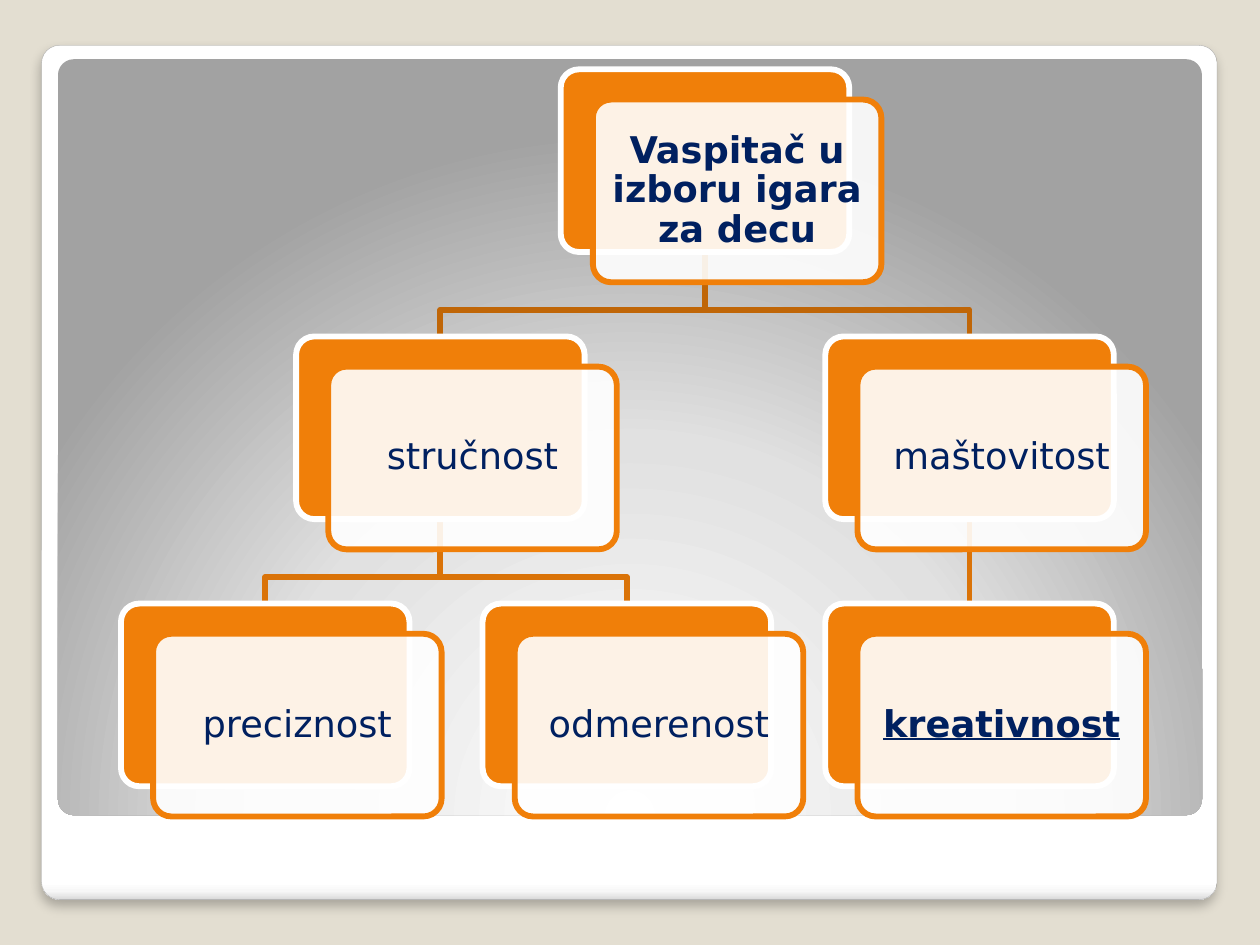
from lxml import etree
from pptx import Presentation
from pptx import util as u
from pptx.dml.color import RGBColor
from pptx.enum import shapes as es, text as et
from pptx.oxml import ns

SAND = RGBColor(0xE3, 0xDE, 0xD1)
WHITE = RGBColor(0xFF, 0xFF, 0xFF)
GRAY = RGBColor(0xA4, 0xA4, 0xA4)
ORANGE = RGBColor(0xF0, 0x7F, 0x09)
DARK = RGBColor(0xC0, 0x66, 0x07)
RUST = RGBColor(0xDA, 0x73, 0x08)
NAVY = RGBColor(0x00, 0x20, 0x60)

WIDE, HIGH = 2.29, 1.45
SHIFT_X, SHIFT_Y = 0.255, 0.24
BEND = 0.46
STROKE = 3.35
ROWS = [0.55, 2.67, 4.79]
NODES = {
    "Vaspitač u izboru igara za decu": (4.45, 0, {"bold": True}),
    "stručnost": (2.35, 1, {}),
    "preciznost": (0.96, 2, {}),
    "odmerenost": (3.83, 2, {}),
    "maštovitost": (6.55, 1, {}),
    "kreativnost": (6.55, 2, {"bold": True, "underline": True}),
}
ROOT = "Vaspitač u izboru igara za decu"
LINKS = [
    ("maštovitost", "kreativnost", RUST),
    (ROOT, "maštovitost", DARK),
    ("stručnost", "odmerenost", RUST),
    ("stručnost", "preciznost", RUST),
    (ROOT, "stručnost", DARK),
]


def put(obj, vals):
    for name, val in vals.items():
        setattr(obj, name, val)


def add(node, tag, **vals):
    return etree.SubElement(node, ns.qn("a:" + tag), {k: str(v) for k, v in vals.items()})


def stroke(shape, color, width=STROKE):
    shape.line.color.rgb = color
    shape.line.width = u.Pt(width)


def panel(slide, box, round_by):
    shape = slide.shapes.add_shape(
        es.MSO_SHAPE.ROUNDED_RECTANGLE, *[u.Inches(v) for v in box])
    shape.adjustments[0] = round_by
    shape.shadow.inherit = False
    return shape


def blend(shape, stops):
    shape.fill.gradient()
    grad = shape.element.spPr.find(ns.qn("a:gradFill"))
    for kid in list(grad):
        grad.remove(kid)
    grad.set("rotWithShape", "1")
    group = add(grad, "gsLst")
    for pos, color in stops:
        add(add(group, "gs", pos=pos * 1000), "srgbClr", val=color)
    return grad


def frame(slide, box):
    left, top, width, height = box
    outer = panel(slide, box, 0.021)
    grad = blend(outer, [(0, "FFFFFF"), (98, "FFFFFF"), (99, "F7F7F7"), (100, "DADADA")])
    add(grad, "lin", ang=90 * 60000, scaled=0)
    stroke(outer, GRAY, 0.16)
    effect = outer.element.spPr.find(ns.qn("a:effectLst"))
    shade = add(effect, "outerShdw", blurRad=u.Pt(6), dist=u.Pt(4),
                dir=90 * 60000, algn="t", rotWithShape=0)
    add(add(shade, "srgbClr", val="000000"), "alpha", val=25000)

    inner = panel(slide, (left + 0.13, top + 0.11, width - 0.25, height - 0.78), 0.021)
    grad = blend(inner, [(0, "FFFFFF"), (55, "E1E1E1"), (100, "A2A2A2")])
    add(add(grad, "path", path="circle"), "fillToRect", l=50000, t=175000, r=50000, b=-75000)
    inner.line.fill.background()


def link(slide, start, end, color):
    (x1, y1), (x2, y2) = start, end
    if x1 == x2:
        line = slide.shapes.add_connector(
            es.MSO_CONNECTOR.STRAIGHT, *[u.Inches(v) for v in (x1, y1, x2, y2)])
        add(line.element.spPr, "effectLst")
        stroke(line, color)
        return
    spots = [(u.Inches(x), u.Inches(y)) for x, y in
             (start, (x1, y1 + BEND), (x2, y1 + BEND), end)]
    path = slide.shapes.build_freeform(*spots[0])
    path.add_line_segments(spots[1:], close=False)
    line = path.convert_to_shape()
    line.shadow.inherit = False
    line.fill.background()
    stroke(line, color)


def card(slide, box, words, style):
    left, top, width, height = box
    back = panel(slide, box, 0.1)
    back.fill.solid()
    back.fill.fore_color.rgb = ORANGE
    stroke(back, WHITE)

    front = panel(slide, (left + SHIFT_X, top + SHIFT_Y, width, height), 0.1)
    front.fill.solid()
    front.fill.fore_color.rgb = WHITE
    add(front.element.spPr.find(".//" + ns.qn("a:srgbClr")), "alpha", val=90000)
    stroke(front, ORANGE)

    body = front.text_frame
    put(body, {"word_wrap": True, "vertical_anchor": et.MSO_ANCHOR.MIDDLE})
    put(body, {"margin_" + side: u.Inches(0.09)
               for side in ("left", "top", "right", "bottom")})
    para = body.paragraphs[0]
    put(para, {"alignment": et.PP_ALIGN.CENTER, "line_spacing": 0.9})
    run = para.add_run()
    run.text = words
    put(run.font, {"name": "DejaVu Sans", "size": u.Pt(21), **style})
    run.font.color.rgb = NAVY


def tree(slide):
    for parent, child, color in LINKS:
        (px, prow, _), (cx, crow, _) = NODES[parent], NODES[child]
        link(slide, (px + WIDE / 2, ROWS[prow] + HIGH),
             (cx + WIDE / 2, ROWS[crow]), color)
    for words, (left, row, style) in NODES.items():
        card(slide, (left, ROWS[row], WIDE, HIGH), words, style)


def main():
    deck = Presentation()
    put(deck, {"slide_width": u.Inches(10), "slide_height": u.Inches(7.5)})
    slide = deck.slides.add_slide(deck.slide_layouts[6])
    slide.background.fill.solid()
    slide.background.fill.fore_color.rgb = SAND
    frame(slide, (0.33, 0.36, 9.33, 6.78))
    tree(slide)
    deck.save("out.pptx")


if __name__ == "__main__":
    main()
